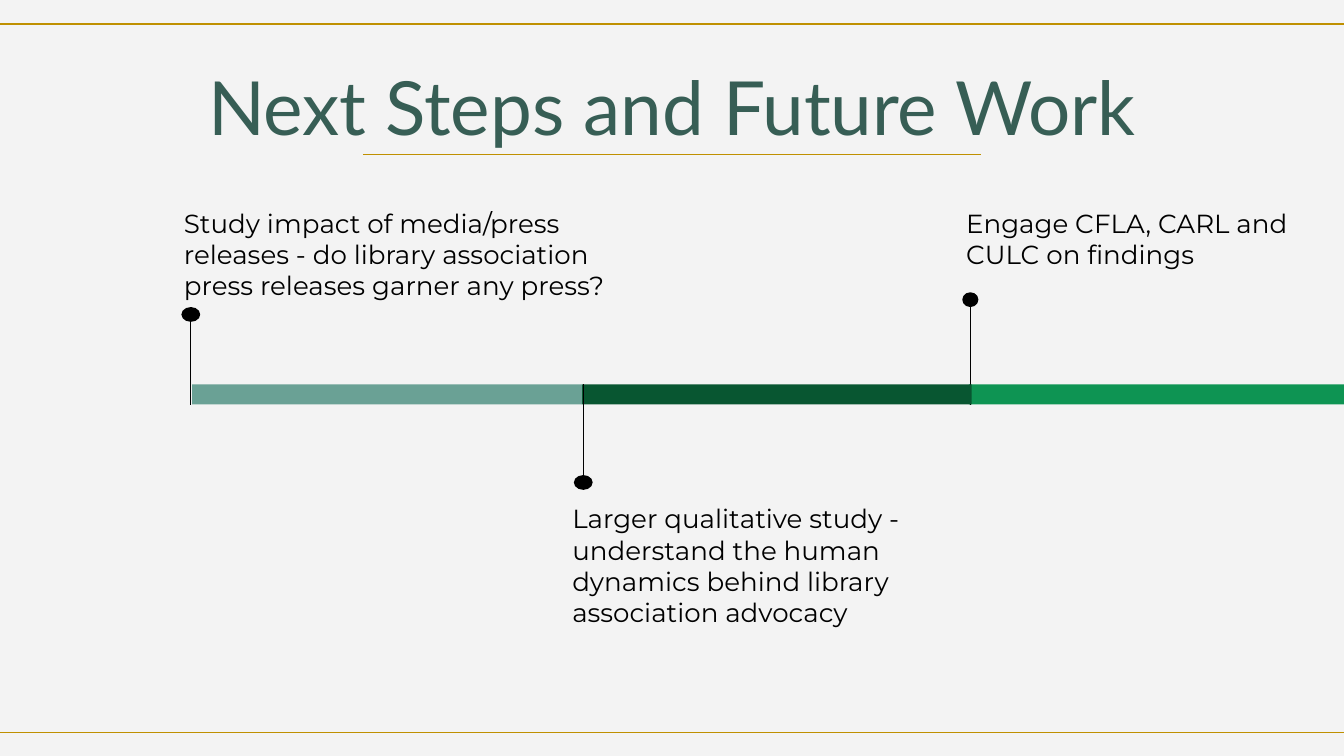
from lxml.etree import SubElement
from pptx import Presentation
from pptx.dml.color import RGBColor
from pptx.enum.shapes import MSO_CONNECTOR, MSO_SHAPE
from pptx.enum.text import MSO_ANCHOR, MSO_AUTO_SIZE, PP_ALIGN
from pptx.oxml.ns import qn
from pptx.util import Inches, Pt

BACKGROUND = RGBColor(0xF3, 0xF3, 0xF3)
GOLD = RGBColor(0xBF, 0x90, 0x00)
TITLE_GREEN = RGBColor(0x37, 0x5E, 0x55)
BLACK = RGBColor(0, 0, 0)
SAGE = RGBColor(0x6A, 0xA1, 0x95)
FOREST = RGBColor(0x08, 0x56, 0x31)
EMERALD = RGBColor(0x0E, 0x94, 0x53)

TITLE = "Next Steps and Future Work"

# Gold rules: left, right, y
RULES = [(-0.01, 10.01, 0.18), (-0.01, 10.01, 5.45), (2.7, 7.3, 1.15)]

# Each step: text, bar colour, bar left, bar width, stem x,
# dot centre y, dot width, text box (left, top, width, height)
STEPS = [
    ("Engage CFLA, CARL and CULC on findings",
     EMERALD, 7.21, 2.84, 7.22, 2.23, 0.12, (7.09, 1.44, 2.84, 0.56)),
    ("Larger qualitative study - understand the human dynamics "
     "behind library association advocacy",
     FOREST, 4.33, 2.9, 4.34, 3.59, 0.14, (4.16, 3.64, 3.34, 0.79)),
    ("Study impact of media/press releases - do library association "
     "press releases garner any press?",
     SAGE, 1.43, 2.9, 1.42, 2.34, 0.14, (1.27, 1.44, 3.5, 0.38)),
]
BAR_TOP, BAR_HEIGHT = 2.86, 0.15
DOT_HEIGHT = 0.11


def add_line(slide, x1, y1, x2, y2, color):
    line = slide.shapes.add_connector(
        MSO_CONNECTOR.STRAIGHT, *map(Inches, (x1, y1, x2, y2)))
    line.line.color.rgb = color
    line.line.width = Pt(0.75)
    SubElement(line._element.spPr, qn("a:effectLst"))


def add_filled(slide, preset, box, color):
    shape = slide.shapes.add_shape(preset, *map(Inches, box))
    shape.fill.solid()
    shape.fill.fore_color.rgb = color
    shape.line.fill.background()
    shape.shadow.inherit = False


def set_text(shape, text, font_name, size, color):
    frame = shape.text_frame
    frame.text = text
    frame.word_wrap = True
    frame.auto_size = MSO_AUTO_SIZE.NONE
    frame.vertical_anchor = MSO_ANCHOR.TOP
    frame.margin_left = frame.margin_right = Inches(0.1)
    frame.margin_top = frame.margin_bottom = Inches(0.1)
    font = frame.paragraphs[0].runs[0].font
    font.name, font.size, font.color.rgb = font_name, Pt(size), color


def add_step(slide, text, color, bar_left, bar_width, stem_x, dot_y,
             dot_width, text_box):
    add_filled(slide, MSO_SHAPE.RECTANGLE,
               (bar_left, BAR_TOP, bar_width, BAR_HEIGHT), color)
    # The stem crosses the bar and ends on its far side
    stem_end = BAR_TOP if dot_y > BAR_TOP else BAR_TOP + BAR_HEIGHT
    add_line(slide, stem_x, dot_y, stem_x, stem_end, BLACK)
    add_filled(slide, MSO_SHAPE.OVAL,
               (stem_x - dot_width / 2, dot_y - DOT_HEIGHT / 2,
                dot_width, DOT_HEIGHT), BLACK)
    caption = slide.shapes.add_textbox(*map(Inches, text_box))
    set_text(caption, text, "Montserrat", 14, BLACK)


def main():
    prs = Presentation()
    prs.slide_width = Inches(10)
    prs.slide_height = Inches(10 * 9 / 16)
    slide = prs.slides.add_slide(prs.slide_layouts[5])
    slide.background.fill.solid()
    slide.background.fill.fore_color.rgb = BACKGROUND

    for left, right, y in RULES:
        add_line(slide, left, y, right, y, GOLD)

    title = slide.shapes.title
    title.left, title.top = Inches(0.78), Inches(0.45)
    title.width, title.height = Inches(8.44), Inches(0.66)
    set_text(title, TITLE, "Lato", 40, TITLE_GREEN)
    title.text_frame.margin_top = 0
    title.text_frame.paragraphs[0].alignment = PP_ALIGN.CENTER

    for step in STEPS:
        add_step(slide, *step)

    prs.save("out.pptx")


if __name__ == "__main__":
    main()
